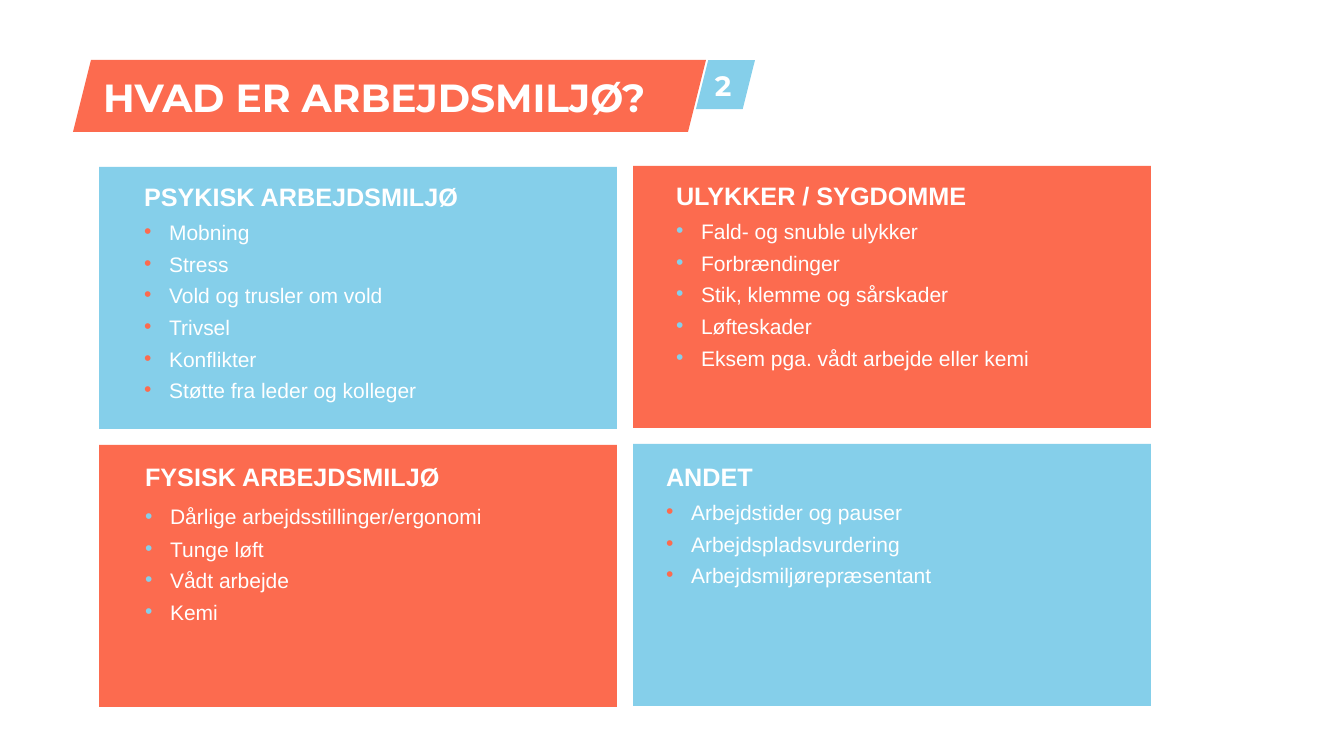
from dataclasses import dataclass

import lxml.etree
import pptx
import pptx.dml.color
import pptx.enum.shapes
import pptx.enum.text
import pptx.oxml.ns
import pptx.util

EMU_PER_PX = 914400 / 100.8
CORAL, SKY, WHITE = "FC6B4F", "85CFEA", "FFFFFF"
Box = tuple[int, int, int, int]

PANEL_LEFT, PANEL_TOP = 99, 167
PANEL_WIDTH, PANEL_HEIGHT = 518, 262
COLUMN_STEP, ROW_STEP = 534, 278
RIGHT_COLUMN_LIFT = 1
BULLET_INDENT = 25


@dataclass(frozen=True)
class Panel:
    column: int
    row: int
    fill: str
    bullet: str
    text_box: Box
    heading: str
    topics: list[str]
    first_topic_spacing: float = 0.7


PANELS = [
    Panel(0, 0, SKY, CORAL, (134, 180, 343, 236), "PSYKISK ARBEJDSMILJØ",
          ["Mobning", "Stress", "Vold og trusler om vold", "Trivsel",
           "Konflikter", "Støtte fra leder og kolleger"]),
    Panel(0, 1, CORAL, SKY, (135, 460, 407, 183), "FYSISK ARBEJDSMILJØ",
          ["Dårlige arbejdsstillinger/ergonomi", "Tunge løft",
           "Vådt arbejde", "Kemi"], 0.9),
    Panel(1, 0, CORAL, SKY, (666, 179, 463, 236), "ULYKKER / SYGDOMME",
          ["Fald- og snuble ulykker", "Forbrændinger",
           "Stik, klemme og sårskader", "Løfteskader",
           "Eksem pga. vådt arbejde eller kemi"]),
    Panel(1, 1, SKY, CORAL, (656, 460, 463, 167), "ANDET",
          ["Arbejdstider og pauser", "Arbejdspladsvurdering",
           "Arbejdsmiljørepræsentant"]),
]


def px(length: int) -> pptx.util.Emu:
    return pptx.util.Emu(round(length * EMU_PER_PX))


def rgb(colour: str) -> pptx.dml.color.RGBColor:
    return pptx.dml.color.RGBColor.from_string(colour)


def place(shape, box: Box) -> None:
    shape.left, shape.top, shape.width, shape.height = map(px, box)


def add_block(slide, kind, box: Box, fill: str) -> None:
    block = slide.shapes.add_shape(kind, *map(px, box))
    block.shadow.inherit = False
    block.fill.solid()
    block.fill.fore_color.rgb = rgb(fill)
    block.line.fill.background()


def bring_to_front(shape) -> None:
    shape.element.getparent().append(shape.element)


def prepare_frame(shape, anchor=pptx.enum.text.MSO_ANCHOR.TOP):
    frame = shape.text_frame
    frame.word_wrap = True
    frame.auto_size = pptx.enum.text.MSO_AUTO_SIZE.NONE
    frame.vertical_anchor = anchor
    return frame


def set_bullet(paragraph, colour: str | None) -> None:
    """Give the paragraph a coloured dot, or no bullet and no indent."""
    properties = paragraph._p.get_or_add_pPr()
    indent = px(BULLET_INDENT) if colour else 0
    properties.set("marL", str(indent))
    properties.set("indent", str(-indent))

    def add(parent, tag: str, **attributes: str):
        return lxml.etree.SubElement(parent, pptx.oxml.ns.qn(tag), attributes)

    if colour:
        add(add(properties, "a:buClr"), "a:srgbClr", val=colour)
        add(properties, "a:buFont", typeface="Arial")
        add(properties, "a:buChar", char="•")
    else:
        add(properties, "a:buNone")


def write(paragraph, text: str, size: int, font: str, bold: bool,
          spacing: float = 0.9, before: int = 0) -> None:
    paragraph.alignment = pptx.enum.text.PP_ALIGN.LEFT
    paragraph.line_spacing = spacing
    paragraph.space_before = pptx.util.Pt(before)
    run = paragraph.add_run()
    run.text = text
    run.font.size = pptx.util.Pt(size)
    run.font.name = font
    run.font.bold = bold
    run.font.color.rgb = rgb(WHITE)


def add_header(slide) -> None:
    parallelogram = pptx.enum.shapes.MSO_SHAPE.PARALLELOGRAM
    add_block(slide, parallelogram, (73, 60, 633, 72), CORAL)
    title = slide.shapes.title
    place(title, (93, 60, 677, 80))
    bring_to_front(title)
    frame = prepare_frame(title, pptx.enum.text.MSO_ANCHOR.MIDDLE)
    write(frame.paragraphs[0], "HVAD ER ARBEJDSMILJØ?", 28, "Montserrat", True)

    add_block(slide, parallelogram, (696, 60, 59, 49), SKY)
    number = slide.shapes.add_textbox(*map(px, (705, 67, 46, 40)))
    write(prepare_frame(number).paragraphs[0], "2", 20, "Montserrat", True)


def add_panel(slide, panel: Panel, body) -> None:
    left = PANEL_LEFT + panel.column * COLUMN_STEP
    top = PANEL_TOP + panel.row * ROW_STEP - panel.column * RIGHT_COLUMN_LIFT
    add_block(slide, pptx.enum.shapes.MSO_SHAPE.RECTANGLE,
              (left, top, PANEL_WIDTH, PANEL_HEIGHT), panel.fill)
    place(body, panel.text_box)
    bring_to_front(body)
    frame = prepare_frame(body)
    heading = frame.paragraphs[0]
    set_bullet(heading, None)
    write(heading, panel.heading, 18, "Arial", True)
    for index, topic in enumerate(panel.topics):
        paragraph = frame.add_paragraph()
        set_bullet(paragraph, panel.bullet)
        spacing = 0.7 if index else panel.first_topic_spacing
        write(paragraph, topic, 15, "Arial", False, spacing, 10)


def main() -> None:
    presentation = pptx.Presentation()
    presentation.slide_width, presentation.slide_height = px(1344), px(756)
    comparison_layout = presentation.slide_layouts[4]
    slide = presentation.slides.add_slide(comparison_layout)
    bodies = list(slide.placeholders)[1:]
    add_header(slide)
    for panel, body in zip(PANELS, bodies):
        add_panel(slide, panel, body)
    presentation.save("out.pptx")


if __name__ == "__main__":
    main()
